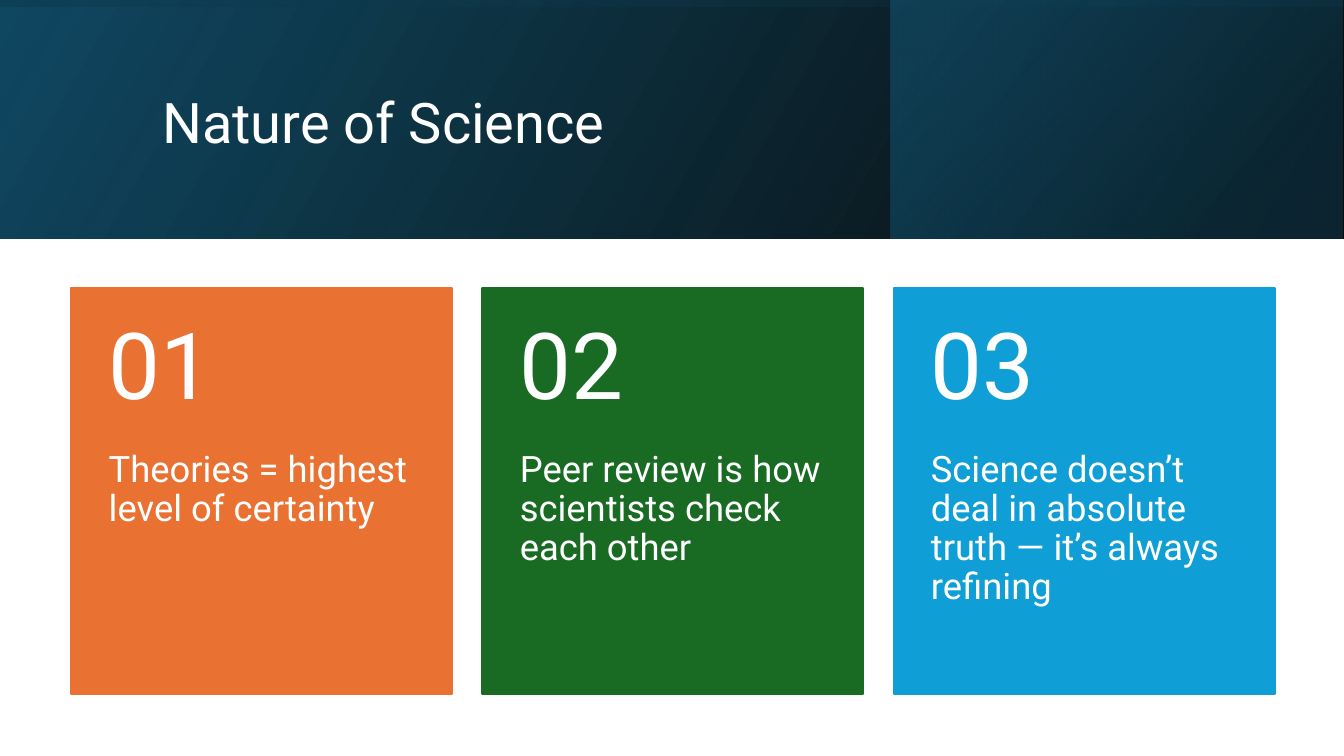
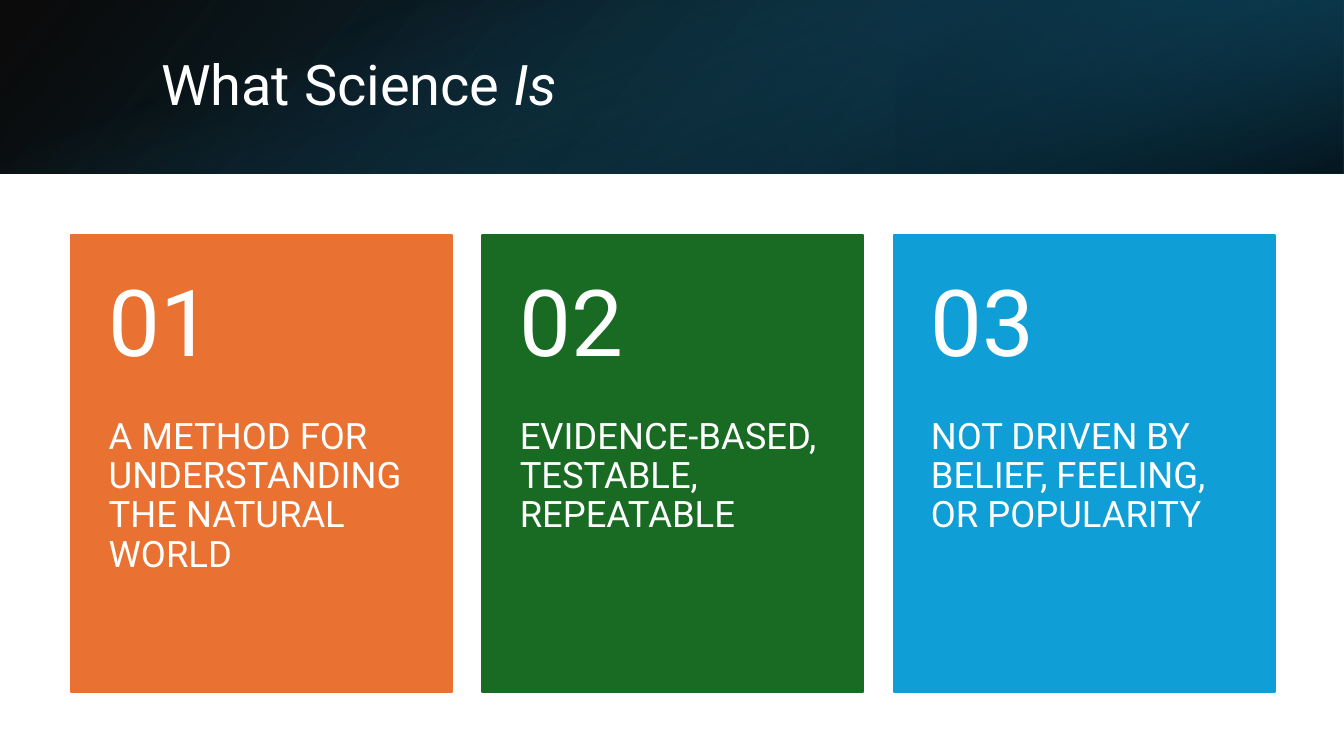
"""Build two science slides, each with a gradient title band and three numbered cards."""
from dataclasses import dataclass

from lxml.etree import SubElement
from pptx import Presentation
from pptx.dml.color import RGBColor
from pptx.enum.shapes import MSO_SHAPE
from pptx.enum.text import MSO_ANCHOR
from pptx.oxml.ns import qn
from pptx.util import Cm, Pt


@dataclass(frozen=True)
class Theme:
    font: str = "Roboto"
    text: str = "FFFFFF"
    black: str = "000000"
    navy: str = "0B3041"
    deep_blue: str = "104862"
    teal: str = "156082"
    cards: tuple = ("E97132", "196B24", "0F9ED5")
    title_size: int = 40
    number_size: int = 66
    body_size: int = 26


theme = Theme()
PAGE_WIDTH, PAGE_HEIGHT = 33.87, 19.05
CARD_LEFT, CARD_WIDTH, CARD_GAP = 1.8, 9.6, 0.76
NUMBER_SHARE = 0.4


def add_gradient(page, left, width, height, rotation, flipped, angle, stops):
    """Add a gradient layer; stops are (position %, colour, opacity %)."""
    shape_width, shape_height = (height, width) if rotation % 180 else (width, height)
    layer = page.shapes.add_shape(
        MSO_SHAPE.RECTANGLE,
        Cm(left + (width - shape_width) / 2), Cm((height - shape_height) / 2),
        Cm(shape_width), Cm(shape_height))
    layer.rotation = rotation
    layer.shadow.inherit = False
    layer.line.fill.background()
    layer.fill.gradient()
    if flipped:
        layer.element.spPr.find(qn("a:xfrm")).set("flipH", "1")
    gradient = layer.element.spPr.find(qn("a:gradFill"))
    for child in list(gradient):
        gradient.remove(child)
    stop_list = SubElement(gradient, qn("a:gsLst"))
    for position, colour, opacity in stops:
        stop = SubElement(stop_list, qn("a:gs"), pos=str(position * 1000))
        fill = SubElement(stop, qn("a:srgbClr"), val=colour)
        SubElement(fill, qn("a:alpha"), val=str(opacity * 1000))
    SubElement(gradient, qn("a:lin"), ang=str(angle * 60000), scaled="0")


def add_text(page, area, spans, size, anchor, insets=(0.25, 0.13, 0.25, 0.13)):
    """Add a one-paragraph text box; spans are (text, italic) pairs."""
    box = page.shapes.add_textbox(*map(Cm, area))
    frame = box.text_frame
    frame.word_wrap = True
    frame.vertical_anchor = anchor
    frame.margin_left, frame.margin_top, frame.margin_right, frame.margin_bottom = map(Cm, insets)
    paragraph = frame.paragraphs[0]
    paragraph.line_spacing = 0.9
    paragraph.font.name = theme.font
    paragraph.font.size = Pt(size)
    paragraph.font.color.rgb = RGBColor.from_string(theme.text)
    for text, italic in spans:
        span = paragraph.add_run()
        span.text = text
        if italic:
            span.font.italic = True


base_stops = ((0, theme.black, 96), (100, theme.deep_blue, 100))
slides = [
    {
        "title": [("Nature of Science", False)],
        "title_area": (3.84, 0.97, 27, 4.37),
        "band_height": 6.02,
        "layers": [
            (0, PAGE_WIDTH, 0, True, 330, base_stops),
            (22.45, 11.38, 0, True, 320, ((19, theme.navy, 68), (100, theme.teal, 48))),
            (0, PAGE_WIDTH, 270, True, 350, ((23, theme.deep_blue, 16), (99, theme.black, 45))),
        ],
        "card_top": 7.26,
        "card_height": 10.24,
        "cards": [
            "Theories = highest level of certainty",
            "Peer review is how scientists check each other",
            "Science doesn’t deal in absolute truth — it’s always refining",
        ],
    },
    {
        "title": [("What Science ", False), ("Is", True)],
        "title_area": (3.81, 0.97, 27.89, 2.44),
        "band_height": 4.37,
        "layers": [
            (0, PAGE_WIDTH, 0, True, 140, base_stops),
            (22.58, 11.28, 180, True, 320, ((19, theme.navy, 68), (100, theme.teal, 79))),
            (0, PAGE_WIDTH, 90, False, 340, ((23, theme.teal, 0), (99, theme.black, 74))),
        ],
        "card_top": 5.92,
        "card_height": 11.53,
        "cards": [
            "A METHOD FOR UNDERSTANDING THE NATURAL WORLD",
            "EVIDENCE-BASED, TESTABLE, REPEATABLE",
            "NOT DRIVEN BY BELIEF, FEELING, OR POPULARITY",
        ],
    },
]

deck = Presentation()
deck.slide_width, deck.slide_height = Cm(PAGE_WIDTH), Cm(PAGE_HEIGHT)

for content in slides:
    page = deck.slides.add_slide(deck.slide_layouts[6])
    for left, width, rotation, flipped, angle, stops in content["layers"]:
        add_gradient(page, left, width, content["band_height"], rotation, flipped, angle, stops)
    add_text(page, content["title_area"], content["title"], theme.title_size, MSO_ANCHOR.MIDDLE)

    top, height = content["card_top"], content["card_height"]
    number_height = height * NUMBER_SHARE
    for index, (text, colour) in enumerate(zip(content["cards"], theme.cards)):
        left = CARD_LEFT + index * (CARD_WIDTH + CARD_GAP)
        card = page.shapes.add_shape(
            MSO_SHAPE.RECTANGLE, Cm(left), Cm(top), Cm(CARD_WIDTH), Cm(height))
        card.shadow.inherit = False
        card.fill.solid()
        card.fill.fore_color.rgb = RGBColor.from_string(colour)
        card.line.color.rgb = RGBColor.from_string(colour)
        card.line.width = Pt(1.5)
        add_text(page, (left, top + number_height, CARD_WIDTH, height - number_height),
                 [(text, False)], theme.body_size, MSO_ANCHOR.TOP, (0.94, 0, 0.94, 0.91))
        add_text(page, (left, top, CARD_WIDTH, number_height),
                 [(f"{index + 1:02}", False)], theme.number_size, MSO_ANCHOR.MIDDLE,
                 (0.94, 0.46, 0.94, 0.46))

deck.save("out.pptx")
